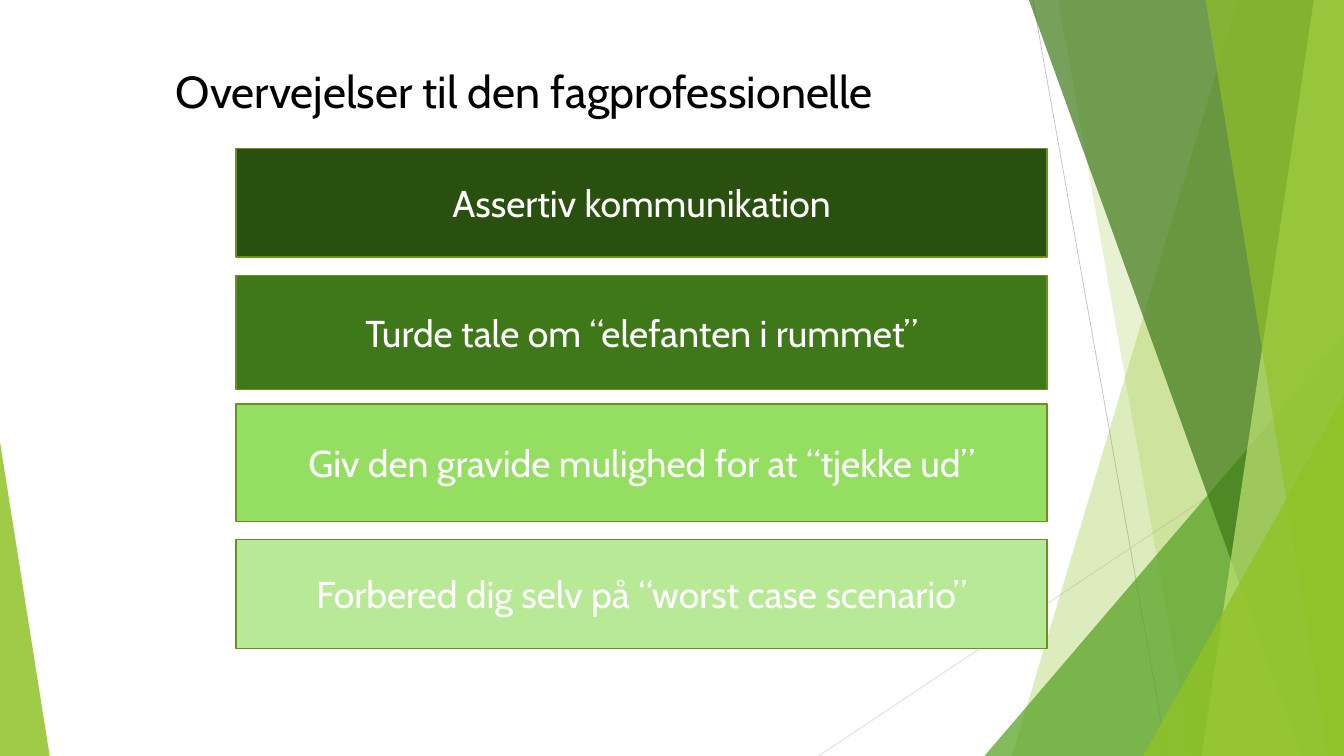
import lxml.etree
import pptx
import pptx.dml.color
import pptx.enum.shapes
import pptx.enum.text
import pptx.oxml.ns
import pptx.util

Cm = pptx.util.Cm
Pt = pptx.util.Pt
qn = pptx.oxml.ns.qn
SHAPE = pptx.enum.shapes.MSO_SHAPE
ALIGN = pptx.enum.text.PP_ALIGN

WIDTH, HEIGHT = 50.8, 28.58
FONT = "Cabin"
COLOURS = {
    "text": "000000",
    "box text": "FFFFFF",
    "outline": "6B901C",
    "grey": "BFBFBF",
    "light grey": "D9D9D9",
    "lime": "90C226",
    "pale lime": "C0E474",
    "green": "54A021",
    "dark green": "3F7819",
    "deepest green": "2A5010",
    "light green": "94DE61",
    "palest green": "B7E996",
}


def colour(name):
    return pptx.dml.color.RGBColor.from_string(COLOURS[name])


def paint(shape, fill, opacity=100):
    """Fill the shape without outline or shadow; opacity is in per cent."""
    shape.shadow.inherit = False
    shape.fill.solid()
    shape.fill.fore_color.rgb = colour(fill)
    shape.line.fill.background()
    if opacity < 100:
        colour_element = shape._element.spPr.find(qn("a:solidFill"))[0]
        alpha = lxml.etree.SubElement(colour_element, qn("a:alpha"))
        alpha.set("val", str(opacity * 1000))


def write(shape, text, size, font_colour, alignment):
    frame = shape.text_frame
    frame.word_wrap = True
    frame.vertical_anchor = pptx.enum.text.MSO_ANCHOR.MIDDLE
    frame.text = text
    paragraph = frame.paragraphs[0]
    paragraph.alignment = alignment
    font = paragraph.runs[0].font
    font.name = FONT
    font.size = Pt(size)
    font.color.rgb = colour(font_colour)


def add_thin_line(slide, x1, y1, x2, y2, line_colour):
    line = slide.shapes.add_connector(
        pptx.enum.shapes.MSO_CONNECTOR.STRAIGHT, Cm(x1), Cm(y1), Cm(x2), Cm(y2))
    line.line.color.rgb = colour(line_colour)
    line.line.width = Pt(0.75)
    lxml.etree.SubElement(line._element.spPr, qn("a:effectLst"))


def add_triangle(slide, left, top, width, height, apex, fill, opacity):
    """Add a triangle whose apex lies at a share (0 to 1) of its width."""
    triangle = slide.shapes.add_shape(
        SHAPE.ISOSCELES_TRIANGLE, Cm(left), Cm(top), Cm(width), Cm(height))
    triangle.adjustments[0] = apex
    paint(triangle, fill, opacity)


def add_facets(slide, left, top, width, height):
    """Overlapping translucent facets that all reach the right edge of the box."""
    right, bottom = left + width, top + height

    def facet(top_x, bottom_x, fill, opacity):
        builder = slide.shapes.build_freeform(Cm(left + top_x), Cm(top))
        builder.add_line_segments([
            (Cm(right), Cm(top)), (Cm(right), Cm(bottom)),
            (Cm(left + bottom_x), Cm(bottom))], close=True)
        paint(builder.convert_to_shape(), fill, opacity)

    def corner(x, y, fill, opacity):
        add_triangle(slide, left + x, top + y, width - x, height - y, 1, fill, opacity)

    add_thin_line(slide, left + 8.1, top, left + 13.18, bottom, "grey")
    add_thin_line(slide, right, top + 15.34, left, bottom, "light grey")
    facet(15.85, 7.31, "lime", 30)
    facet(9.06, 14.12, "lime", 20)
    corner(6.27, 12.7, "green", 72)
    facet(7.95, 18.26, "dark green", 70)
    facet(18.72, 14.48, "pale lime", 70)
    facet(14.63, 19.25, "lime", 65)
    corner(12.27, 14.96, "lime", 80)


def add_title(slide, left, top, width, height, text):
    title = slide.shapes.add_textbox(Cm(left), Cm(top), Cm(width), Cm(height))
    title.text_frame.margin_left = title.text_frame.margin_right = 0
    write(title, text, 48, "text", ALIGN.LEFT)


def add_advice_boxes(slide, left, top, width, boxes):
    """Stack boxes given as (offset from top, height, fill, text)."""
    for offset, height, fill, text in boxes:
        box = slide.shapes.add_shape(
            SHAPE.RECTANGLE, Cm(left), Cm(top + offset), Cm(width), Cm(height))
        paint(box, fill)
        box.line.color.rgb = colour("outline")
        box.line.width = Pt(1.5)
        write(box, text, 40, "box text", ALIGN.CENTER)


def main():
    presentation = pptx.Presentation()
    presentation.slide_width = Cm(WIDTH)
    presentation.slide_height = Cm(HEIGHT)
    slide = presentation.slides.add_slide(presentation.slide_layouts[6])

    add_facets(slide, 30.94, 0, WIDTH - 30.94, HEIGHT)
    add_triangle(slide, 0, 16.71, 1.88, HEIGHT - 16.71, 0, "lime", 85)
    add_title(slide, 6.65, 2.21, 31.88, 2.46, "Overvejelser til den fagprofessionelle")
    add_advice_boxes(slide, 8.92, 5.61, 30.66, [
        (0, 4.11, "deepest green", "Assertiv kommunikation"),
        (4.8, 4.32, "dark green", "Turde tale om “elefanten i rummet”"),
        (9.66, 4.45, "light green", "Giv den gravide mulighed for at “tjekke ud”"),
        (14.79, 4.11, "palest green", "Forbered dig selv på “worst case scenario”"),
    ])
    presentation.save("out.pptx")


if __name__ == "__main__":
    main()
